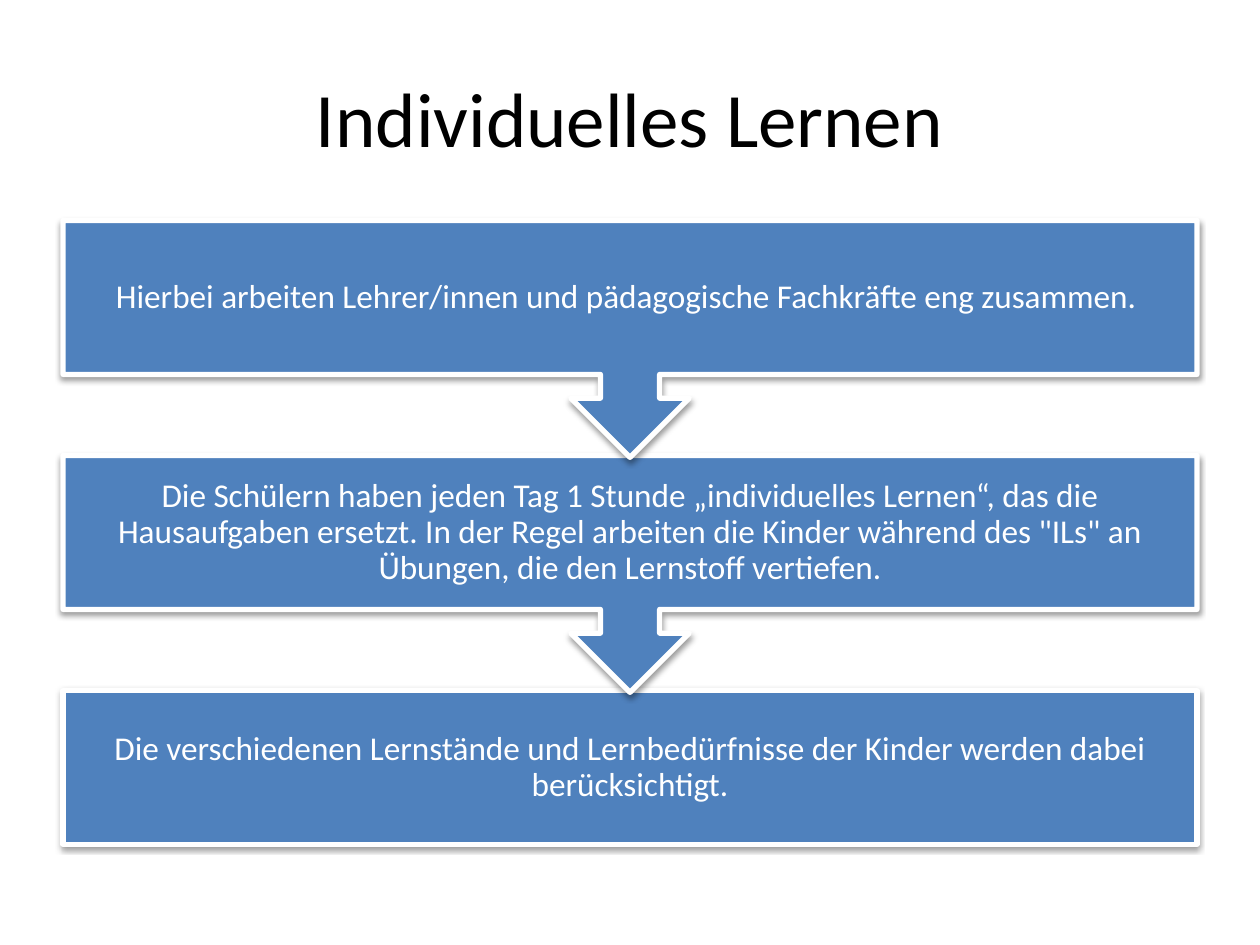
from dataclasses import dataclass

from lxml import etree
from pptx import Presentation
from pptx.dml.color import RGBColor
from pptx.enum.shapes import MSO_SHAPE
from pptx.enum.text import MSO_ANCHOR, PP_ALIGN
from pptx.oxml.ns import qn
from pptx.util import Inches, Pt

RECT = MSO_SHAPE.RECTANGLE
ARROW = MSO_SHAPE.UP_ARROW_CALLOUT
MIDDLE = MSO_ANCHOR.MIDDLE
CENTER = PP_ALIGN.CENTER
BLUE = RGBColor(0x4F, 0x81, 0xBD)
WHITE = RGBColor(0xFF, 0xFF, 0xFF)
BLACK = RGBColor(0, 0, 0)

FONT = "Calibri"
LEFT = 0.5
WIDTH = 9
TOP = 1.75
PITCH = 1.865
BOX = 1.22
CALLOUT = 1.88


@dataclass
class Step:
    text: str
    kind: int = ARROW
    height: float = CALLOUT
    turn: int = 180


STEPS = [
    Step("Hierbei arbeiten Lehrer/innen und pädagogische Fachkräfte eng zusammen. "),
    Step(
        "Die Schülern haben jeden Tag 1 Stunde „individuelles Lernen“, das die "
        "Hausaufgaben ersetzt. In der Regel arbeiten die Kinder während des "
        '"ILs" an Übungen, die den Lernstoff vertiefen.'
    ),
    Step(
        "Die verschiedenen Lernstände und Lernbedürfnisse der Kinder werden "
        "dabei berücksichtigt.",
        RECT, BOX, 0,
    ),
]


def add_shadow(shape) -> None:
    shape.shadow.inherit = False
    effects = shape._element.spPr.find(qn("a:effectLst"))
    outer = etree.SubElement(
        effects, qn("a:outerShdw"), blurRad=str(Pt(3.1)), dist=str(Pt(1.6)),
        dir="5400000", rotWithShape="0",
    )
    color = etree.SubElement(outer, qn("a:srgbClr"), val=str(BLACK))
    etree.SubElement(color, qn("a:alpha"), val="38000")


def add_text(slide, text: str, top: float, height: float, size: float,
             color: RGBColor, inset: float, spacing: float) -> None:
    box = slide.shapes.add_textbox(
        Inches(LEFT), Inches(top), Inches(WIDTH), Inches(height))
    frame = box.text_frame
    frame.word_wrap = True
    frame.vertical_anchor = MIDDLE
    frame.margin_left = frame.margin_right = Inches(inset)
    frame.margin_top = frame.margin_bottom = Inches(inset)
    para = frame.paragraphs[0]
    para.text = text
    para.alignment = CENTER
    para.line_spacing = spacing
    para.font.name = FONT
    para.font.size = Pt(size)
    para.font.color.rgb = color


def add_step(slide, step: Step, top: float) -> None:
    shape = slide.shapes.add_shape(
        step.kind, Inches(LEFT), Inches(top), Inches(WIDTH), Inches(step.height))
    shape.rotation = step.turn
    shape.fill.solid()
    shape.fill.fore_color.rgb = BLUE
    shape.line.color.rgb = WHITE
    shape.line.width = Pt(3)
    add_shadow(shape)
    add_text(slide, step.text, top, BOX, 19, WHITE, 0.15, 0.9)


def main() -> None:
    deck = Presentation()
    deck.slide_width = Inches(10)
    deck.slide_height = Inches(7.5)
    slide = deck.slides.add_slide(deck.slide_layouts[6])
    add_text(slide, "Individuelles Lernen", 0.3, 1.25, 44, BLACK, 0.05, 1.0)
    for row, step in reversed(list(enumerate(STEPS))):
        add_step(slide, step, TOP + row * PITCH)
    deck.save("out.pptx")


if __name__ == "__main__":
    main()
